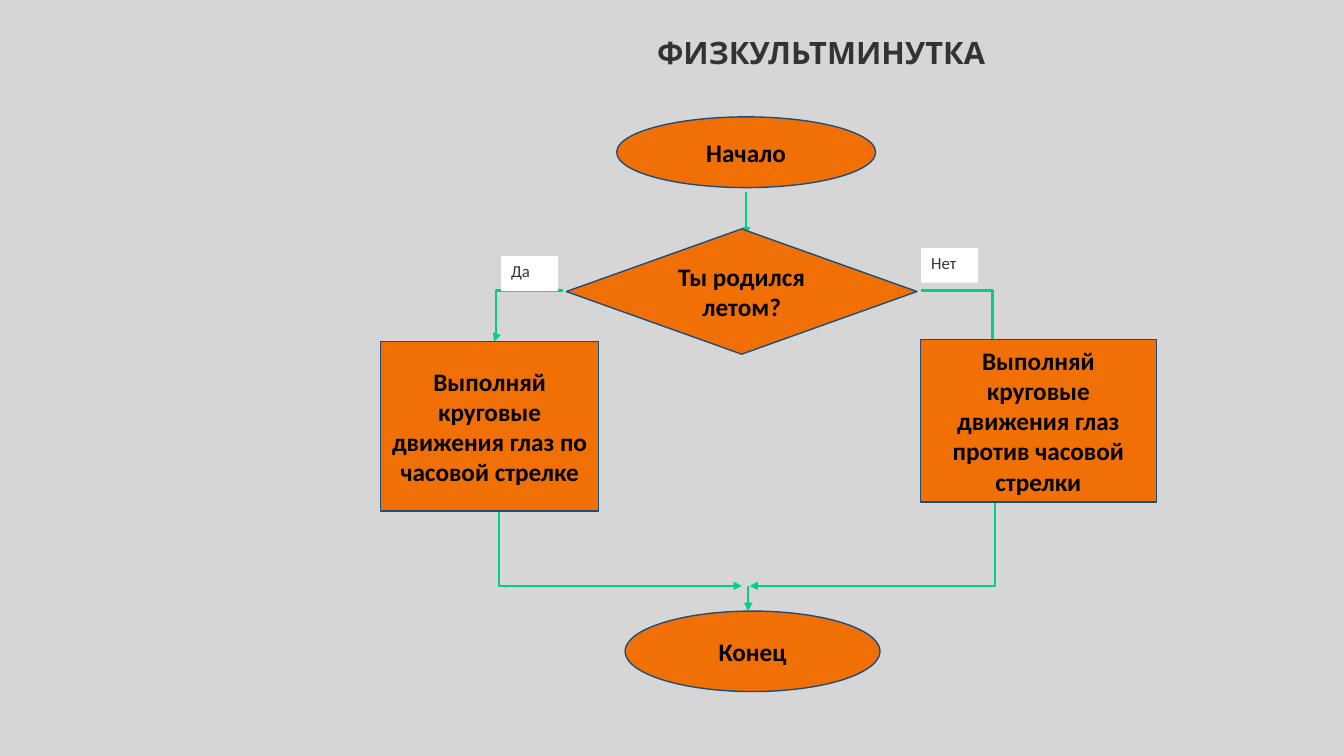
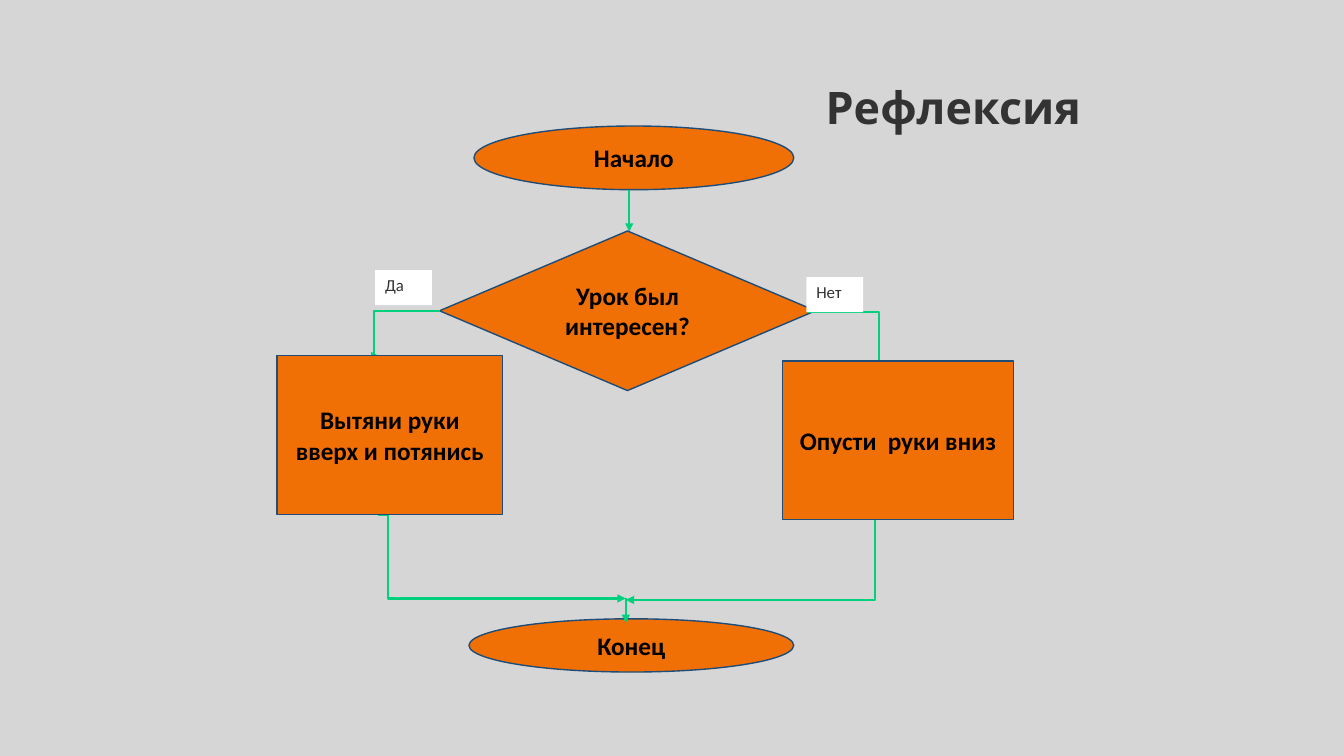
from lxml import etree
from pptx import Presentation
from pptx.dml.color import RGBColor
from pptx.enum import shapes, text
from pptx.oxml import ns
from pptx.util import Pt

ORANGE = RGBColor(0xF1, 0x70, 0x05)
NAVY = RGBColor(0x1F, 0x4D, 0x78)
GREEN = RGBColor(0x01, 0xD1, 0x7D)
GREY = RGBColor(0xD6, 0xD6, 0xD6)
CHARCOAL = RGBColor(0x33, 0x33, 0x33)
BLACK = RGBColor(0, 0, 0)
WHITE = RGBColor(0xFF, 0xFF, 0xFF)

TITLE_ONLY = 5
SHAPE = shapes.MSO_SHAPE
ALIGN = text.PP_ALIGN
ANCHOR = text.MSO_ANCHOR


class FlowchartDeck:
    """Holds the shared style and the slide being drawn."""

    title_font = dict(name="League Spartan", bold=True)
    step_font = dict(name="Calibri", size=Pt(18), bold=True)
    label_font = dict(name="Calibri", size=Pt(12), bold=False)

    def __init__(self):
        self.prs = Presentation()
        self.prs.slide_width, self.prs.slide_height = Pt(960), Pt(540)
        background = self.prs.slide_master.background.fill
        background.solid()
        background.fore_color.rgb = GREY
        self.slide = None

    def set_text(self, shape, words, font, color, align, anchor):
        frame = shape.text_frame
        frame.text = words
        frame.word_wrap = True
        frame.auto_size = text.MSO_AUTO_SIZE.NONE
        frame.vertical_anchor = anchor
        paragraph = frame.paragraphs[0]
        paragraph.alignment = align
        for key, value in font.items():
            setattr(paragraph.font, key, value)
        paragraph.font.color.rgb = color

    def new_slide(self, title, box, size, align):
        self.slide = self.prs.slides.add_slide(self.prs.slide_layouts[TITLE_ONLY])
        heading = self.slide.shapes.title
        for side, length in zip(("left", "top", "width", "height"), box):
            setattr(heading, side, Pt(length))
        self.set_text(heading, title, dict(self.title_font, size=Pt(size)),
                      CHARCOAL, align, ANCHOR.MIDDLE)

    def block(self, kind, box, fill):
        shape = self.slide.shapes.add_shape(kind, *map(Pt, box))
        shape.shadow.inherit = False
        shape.fill.solid()
        shape.fill.fore_color.rgb = fill
        return shape

    def step(self, kind, words, box):
        shape = self.block(kind, box, ORANGE)
        shape.line.color.rgb = NAVY
        shape.line.width = Pt(1)
        self.set_text(shape, words, self.step_font, BLACK, ALIGN.CENTER, ANCHOR.MIDDLE)

    def label(self, words, corner):
        shape = self.block(SHAPE.RECTANGLE, (*corner, 40.5, 25), WHITE)
        shape.line.fill.background()
        self.set_text(shape, words, self.label_font, CHARCOAL, ALIGN.LEFT, ANCHOR.TOP)

    def arrow(self, start, end, bend=None):
        """Draw an arrow; with bend, its vertical part stands at that x."""
        kind = shapes.MSO_CONNECTOR.STRAIGHT if bend is None else shapes.MSO_CONNECTOR.ELBOW
        connector = self.slide.shapes.add_connector(kind, *map(Pt, (*start, *end)))
        connector.line.color.rgb = GREEN
        connector.line.width = Pt(1.5)
        properties = connector._element.spPr
        outline = properties.find(ns.qn("a:ln"))
        etree.SubElement(outline, ns.qn("a:tailEnd"), type="triangle")
        etree.SubElement(properties, ns.qn("a:effectLst"))
        if bend is not None:
            share = round((bend - start[0]) / (end[0] - start[0]) * 100000)
            guides = properties.find(".//" + ns.qn("a:avLst"))
            etree.SubElement(guides, ns.qn("a:gd"), name="adj1", fmla=f"val {share}")

    def flowchart(self, begin, begin_arrow, question, yes, no, finish, finish_arrow):
        """Draw a two-way choice; the branches are dicts of words and places."""
        self.step(SHAPE.OVAL, "Начало", begin)
        self.arrow(*begin_arrow)
        self.step(SHAPE.DIAMOND, *question)
        branches = (("Да", yes), ("Нет", no))
        for answer, branch in branches:
            self.arrow(*branch["entry"])
            self.label(answer, branch["label"])
            self.arrow(*branch["exit"])
        self.step(SHAPE.OVAL, "Конец", finish)
        self.arrow(*finish_arrow)
        for _, branch in branches:
            self.step(SHAPE.RECTANGLE, *branch["action"])


def main():
    deck = FlowchartDeck()

    deck.new_slide("ФИЗКУЛЬТМИНУТКА", (380.5, 16.5, 412, 42), 22, ALIGN.CENTER)
    deck.flowchart(
        begin=(440.5, 83.5, 185, 50.5),
        begin_arrow=((533, 137.5), (533, 168)),
        question=("Ты родился летом?", (404.5, 163.5, 250.5, 89.5)),
        yes=dict(
            entry=((402, 207.5), (353, 244), 354.5),
            label=(358, 183),
            exit=((378, 359.5), (530, 418.5), 356.5),
            action=("Выполняй круговые движения глаз по часовой стрелке",
                    (272, 244, 155.5, 121)),
        ),
        no=dict(
            entry=((658, 207.5), (705, 249), 709),
            label=(658, 177),
            exit=((675.5, 357), (535.5, 418.5), 710.5),
            action=("Выполняй круговые движения глаз против часовой стрелки",
                    (657.5, 242.5, 168.5, 116)),
        ),
        finish=(446.5, 436.5, 182, 57.5),
        finish_arrow=((534.5, 418.5), (534.5, 436.5)),
    )

    deck.new_slide("Рефлексия", (582.5, 46, 289, 60), 32, ALIGN.LEFT)
    deck.flowchart(
        begin=(338.5, 90, 228.5, 45.5),
        begin_arrow=((449.5, 135.5), (449.5, 165.5)),
        question=("Урок был интересен?", (314, 165, 268.5, 114)),
        yes=dict(
            entry=((314, 222), (265, 258), 267),
            label=(268, 193),
            exit=((270, 368), (447, 427.5), 277),
            action=("Вытяни руки вверх и потянись", (198, 254, 161, 113.5)),
        ),
        no=dict(
            entry=((576.5, 223), (623.5, 265), 628),
            label=(576, 198),
            exit=((623.5, 361.5), (447, 428.5), 625),
            action=("Опусти  руки вниз", (559, 258, 165, 113)),
        ),
        finish=(335, 442, 232, 38),
        finish_arrow=((447, 427.5), (447, 445)),
    )

    deck.prs.save("out.pptx")


if __name__ == "__main__":
    main()
